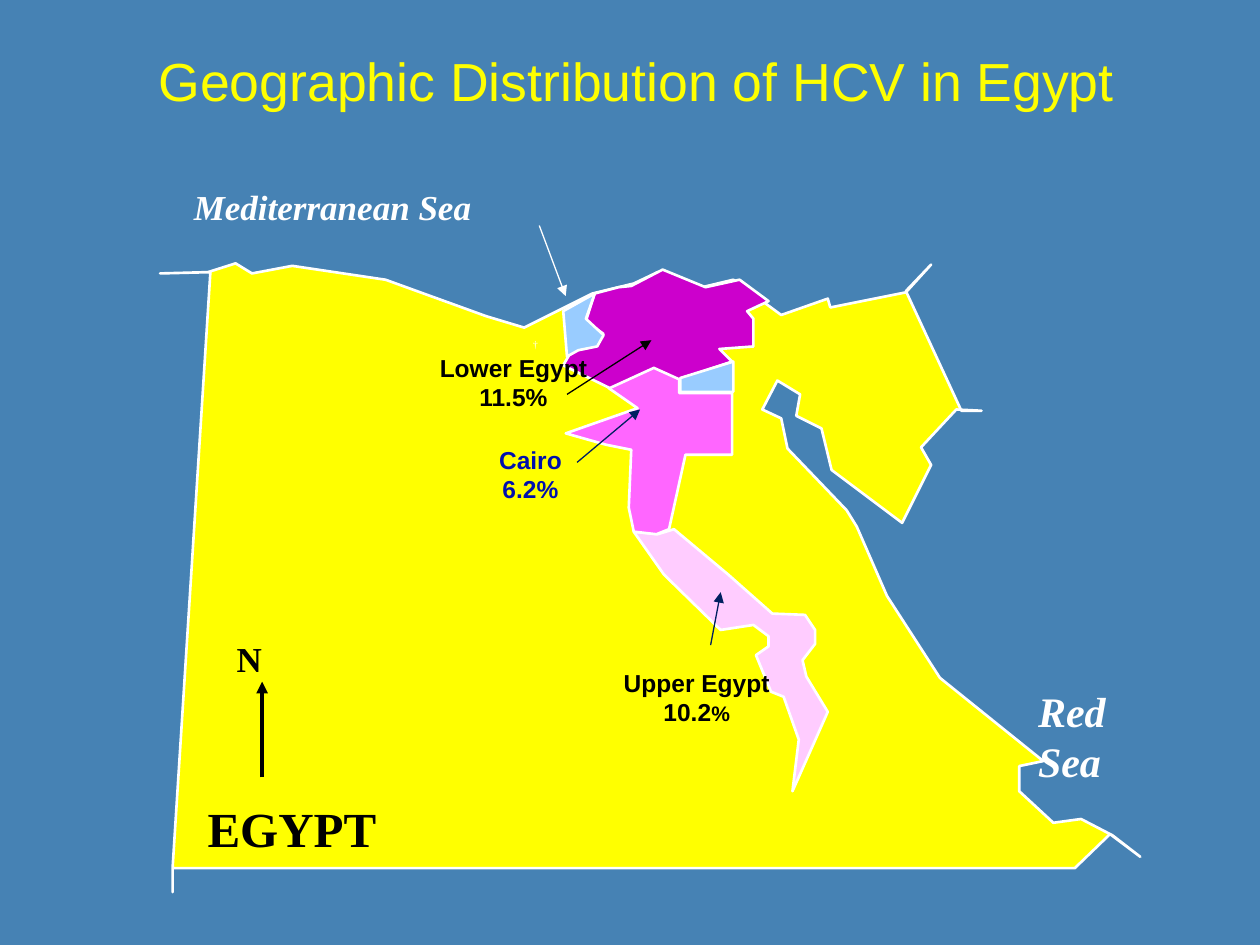
from lxml import etree
from pptx import Presentation
from pptx.dml.color import RGBColor
from pptx.enum import shapes, text
from pptx.oxml.ns import qn
from pptx.util import Inches, Pt

STEEL = RGBColor(0x46, 0x82, 0xB4)
YELLOW = RGBColor(0xFF, 0xFF, 0x00)
WHITE = RGBColor(0xFF, 0xFF, 0xFF)
BLACK = RGBColor(0, 0, 0)
NAVY = RGBColor(0x00, 0x20, 0x60)
BLUE = RGBColor(0x00, 0x10, 0xAE)
PALE_PINK = RGBColor(0xFF, 0xCC, 0xFF)
PINK = RGBColor(0xFF, 0x66, 0xFF)
PURPLE = RGBColor(0xCC, 0x00, 0xCC)
SKY = RGBColor(0x99, 0xCC, 0xFF)
SANS, SERIF = "Arial", "Times New Roman"

# Outlines in inches from the corner of the map
COUNTRY = [
    (0.27, 1.17), (0.65, 1.16), (0.87, 1.09), (1, 1.17), (1.32, 1.11),
    (2.06, 1.22), (2.86, 1.51), (3.16, 1.6), (3.7, 1.33), (4.03, 1.25),
    (4.22, 1.16), (4.57, 1.28), (4.82, 1.22), (5.2, 1.5), (5.57, 1.37),
    (5.59, 1.44), (6.19, 1.32), (6.39, 1.1), (6.19, 1.31), (6.63, 2.26),
    (6.79, 2.26), (6.59, 2.25), (6.31, 2.55), (6.39, 2.69), (6.16, 3.15),
    (5.6, 2.73), (5.52, 2.4), (5.32, 2.3), (5.35, 2.13), (5.17, 2.02),
    (5.05, 2.25), (5.2, 2.32), (5.25, 2.56), (5.72, 3.05), (5.8, 3.18),
    (6.04, 3.73), (6.46, 4.38), (7.28, 5.04), (7.09, 5.08), (7.09, 5.28),
    (7.36, 5.53), (7.58, 5.5), (7.83, 5.63), (8.05, 5.8), (7.81, 5.62),
    (7.53, 5.89), (0.37, 5.89), (0.37, 6.08), (0.37, 5.89), (0.67, 1.16)]
UPPER_EGYPT = [
    (5.29, 5.28), (5.57, 4.65), (5.4, 4.37), (5.37, 4.24), (5.47, 4.11),
    (5.47, 4), (5.39, 3.88), (5.13, 3.87), (4.78, 3.56), (4.35, 3.2),
    (4.22, 3.24), (4.03, 3.22), (4.27, 3.56), (4.72, 4), (4.98, 3.96),
    (5.1, 4.05), (5.1, 4.13), (5, 4.2), (5.12, 4.49), (5.22, 4.53),
    (5.34, 4.87)]
CAIRO = [
    (4.21, 3.24), (4.03, 3.22), (3.99, 3.03), (4.01, 2.57), (3.81, 2.53),
    (3.49, 2.44), (4.06, 2.24), (3.83, 2.08), (4.21, 1.9), (4.39, 2.01),
    (4.39, 2.12), (4.81, 2.12), (4.81, 2.61), (4.44, 2.61), (4.31, 3.2)]
LOWER_EGYPT = [
    (3.72, 1.33), (3.91, 1.28), (4.01, 1.27), (4.26, 1.14), (4.6, 1.28),
    (4.87, 1.22), (5.1, 1.39), (4.93, 1.47), (4.98, 1.53), (4.98, 1.75),
    (4.71, 1.77), (4.81, 1.87), (4.39, 2.01), (4.19, 1.92), (3.84, 2.08),
    (3.47, 1.9), (3.54, 1.78), (3.72, 1.75), (3.79, 1.65), (3.65, 1.55)]
WEST_DELTA = [
    (3.72, 1.33), (3.65, 1.53), (3.79, 1.66), (3.74, 1.75), (3.59, 1.78),
    (3.5, 1.83), (3.47, 1.47)]
EAST_DELTA = [(4.82, 1.87), (4.4, 2), (4.4, 2.11), (4.82, 2.11)]

REGIONS = [(COUNTRY, YELLOW), (UPPER_EGYPT, PALE_PINK), (CAIRO, PINK),
           (LOWER_EGYPT, PURPLE), (WEST_DELTA, SKY), (EAST_DELTA, SKY)]

# Box, lines, font, size, colour, italic, centred
LABELS = [
    ((0.55, 5.29, 3.1, 0.7), ["EGYPT"], SERIF, 28, BLACK, False, False),
    ((0.78, 4.01, 0.82, 0.52), ["N"], SERIF, 20, BLACK, False, False),
    ((3.73, 4.25, 1.6, 0.68), ["Upper Egypt", "10.2"], SANS, 14, BLACK, False, True),
    ((2.23, 1.75, 1.69, 0.73), ["Lower Egypt", "11.5%"], SANS, 14, BLACK, False, True),
    ((0.16, 0.42, 2.96, 0.39), ["Mediterranean Sea"], SERIF, 20, WHITE, True, True),
    ((7.14, 4.39, 1.25, 0.78), ["Red Sea"], SERIF, 24, WHITE, True, False),
    ((2.5, 2.48, 1.42, 0.57), ["Cairo", "6.2%"], SANS, 14, BLUE, False, True),
]

# Start, end, colour, width
ARROWS = [
    ((1.08, 5.17), (1.08, 4.41), BLACK, 2.25),
    ((3.28, 0.79), (3.49, 1.35), WHITE, 0.75),
    ((3.5, 2.13), (4.17, 1.7), BLACK, 0.75),
    ((3.58, 2.67), (4.08, 2.25), NAVY, 0.75),
    ((4.64, 4.12), (4.72, 3.7), NAVY, 0.75),
]


def style(r, font, size, color, bold=False, italic=False):
    r.font.name, r.font.size = font, Pt(size)
    r.font.bold, r.font.italic = bold, italic
    r.font.color.rgb = color


def add_text(parent, box, lines, font, size, color, bold=False, italic=False,
             centred=False):
    tf = parent.shapes.add_textbox(*map(Inches, box)).text_frame
    tf.word_wrap = True
    tf.text = "\n".join(lines)
    for p in tf.paragraphs:
        if centred:
            p.alignment = text.PP_ALIGN.CENTER
        style(p.runs[0], font, size, color, bold, italic)
    return tf


def add_region(parent, left, top, points, color):
    pts = [(Inches(left + x), Inches(top + y)) for x, y in points]
    builder = parent.shapes.build_freeform(*pts[0])
    builder.add_line_segments(pts[1:], close=True)
    sp = builder.convert_to_shape()
    sp.shadow.inherit = False
    sp.fill.solid()
    sp.fill.fore_color.rgb = color
    sp.line.color.rgb = WHITE
    sp.line.width = Pt(1.5)


def add_arrow(parent, left, top, start, end, color, width):
    ends = [Inches(v) for x, y in (start, end) for v in (left + x, top + y)]
    line = parent.shapes.add_connector(shapes.MSO_CONNECTOR.STRAIGHT, *ends)
    line.line.color.rgb = color
    line.line.width = Pt(width)
    etree.SubElement(line.line._get_or_add_ln(), qn("a:tailEnd"), type="triangle")
    etree.SubElement(line._element.spPr, qn("a:effectLst"))


def add_title(s, box):
    tf = add_text(s, box, ["Geographic Distribution of HCV in Egypt"],
                  SANS, 30.6, YELLOW, centred=True)
    tf.vertical_anchor = text.MSO_ANCHOR.MIDDLE
    tf.paragraphs[0].line_spacing = 0.9


def add_map(s, left, top):
    group = s.shapes.add_group_shape()
    for points, color in REGIONS:
        add_region(group, left, top, points, color)
    for (x, y, w, h), lines, font, size, color, italic, centred in LABELS:
        tf = add_text(group, (left + x, top + y, w, h), lines, font, size,
                      color, True, italic, centred)
        if lines[0] == "Upper Egypt":
            r = tf.paragraphs[1].add_run()
            r.text = "%"
            style(r, font, 12, color, bold=True)
    for arrow in ARROWS:
        add_arrow(group, left, top, *arrow)
    tf = add_text(group, (left + 3.13, top + 1.62, 0.28, 0.24), ["†"],
                  SERIF, 10, WHITE)
    tf.paragraphs[0].runs[0]._r.get_or_add_rPr().set("baseline", "30000")


def main():
    prs = Presentation()
    prs.slide_width, prs.slide_height = Inches(10), Inches(7.5)
    s = prs.slides.add_slide(prs.slide_layouts[6])
    s.background.fill.solid()
    s.background.fill.fore_color.rgb = STEEL
    add_title(s, (1, 0.25, 8.1, 0.83))
    add_map(s, 1, 1)
    prs.save("out.pptx")


if __name__ == "__main__":
    main()
